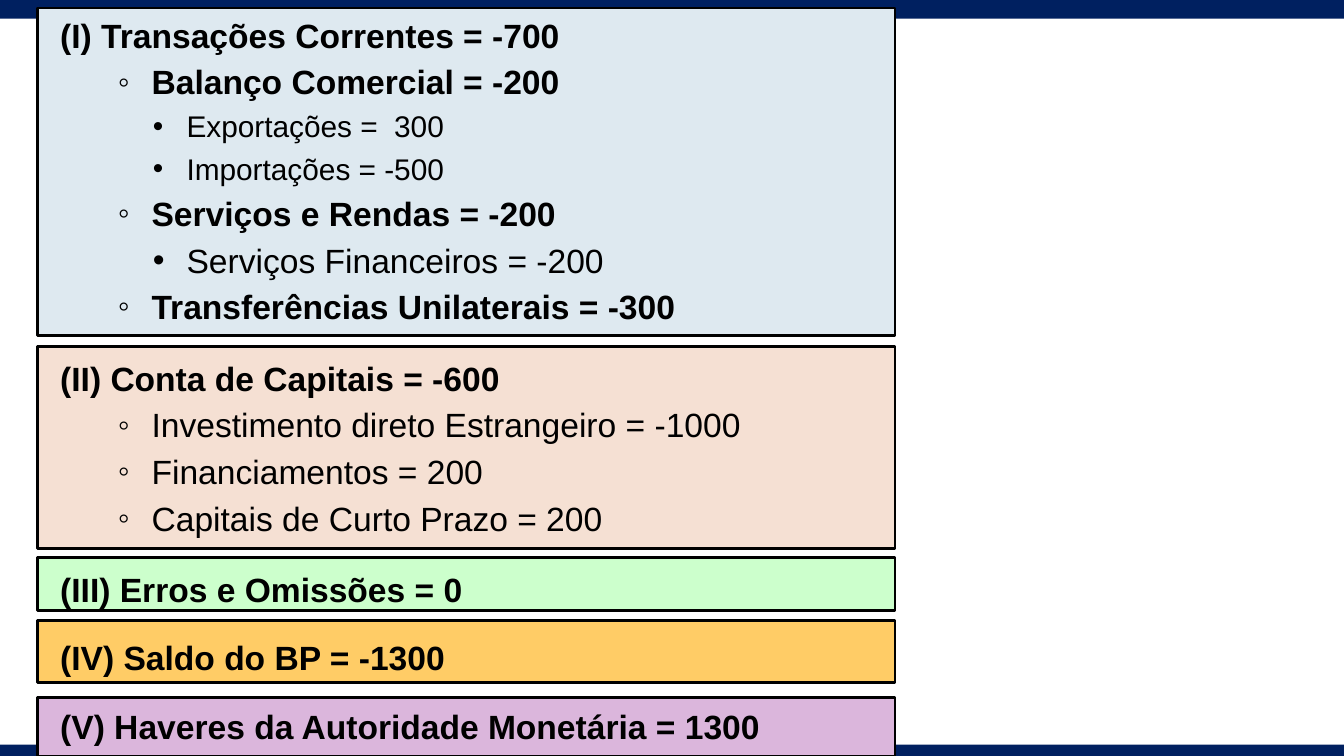
"""Build the balance of payments slide."""
from lxml.etree import SubElement
from pptx import Presentation
from pptx.dml.color import RGBColor
from pptx.enum.shapes import MSO_SHAPE
from pptx.enum.text import MSO_ANCHOR
from pptx.oxml.ns import qn
from pptx.util import Inches, Pt


def color(code):
    return RGBColor.from_string(code)


def add_box(slide, left, top, width, height, fill):
    box = slide.shapes.add_shape(
        MSO_SHAPE.RECTANGLE, Inches(left), Inches(top), Inches(width), Inches(height)
    )
    box.shadow.inherit = False
    box.fill.solid()
    box.fill.fore_color.rgb = color(fill)
    box.line.fill.background()
    return box


prs = Presentation()
prs.slide_width = Inches(10)
prs.slide_height = Inches(10 * 9 / 16)
slide = prs.slides.add_slide(prs.slide_layouts[6])

for top, height in [(0, 0.14), (5.54, 0.11)]:
    add_box(slide, 0, top, 10, height, "002060")

panels = [
    (5.19, 0.44, "DBB6DC"),
    (4.62, 0.46, "FFCC66"),
    (4.15, 0.39, "CCFFCC"),
    (2.58, 1.5, "F5E0D3"),
    (0.06, 2.44, "DEE9F0"),
]
for top, height, fill in panels:
    panel = add_box(slide, 0.28, top, 6.38, height, fill)
    panel.line.color.rgb = color("000000")
    panel.line.width = Pt(1.5)

levels = [None, (0.68, "◦"), (0.94, "•")]
items = [
    ("(I) Transações Correntes = -700", 0, 18, True, 1),
    ("Balanço Comercial = -200", 1, 18, True, 3.4),
    ("Exportações =  300", 2, 16, False, 3.5),
    ("Importações = -500", 2, 16, False, 3.5),
    ("Serviços e Rendas = -200", 1, 18, True, 3.4),
    ("Serviços Financeiros = -200", 2, 18, False, 3.5),
    ("Transferências Unilaterais = -300", 1, 18, True, 3.4),
    ("(II) Conta de Capitais = -600", 0, 18, True, 16.7),
    ("Investimento direto Estrangeiro = -1000", 1, 18, False, 3.4),
    ("Financiamentos = 200", 1, 18, False, 3.4),
    ("Capitais de Curto Prazo = 200", 1, 18, False, 3.4),
    ("(III) Erros e Omissões = 0", 0, 18, True, 16.5),
    ("(IV) Saldo do BP = -1300", 0, 18, True, 15.2),
    ("(V) Haveres da Autoridade Monetária = 1300", 0, 18, True, 15.2),
]
frame = slide.shapes.add_textbox(
    Inches(0.35), Inches(0.06), Inches(6.3), Inches(4.36)
).text_frame
frame.word_wrap = True
frame.vertical_anchor = MSO_ANCHOR.TOP
frame.text = "\n".join(item[0] for item in items)

for para, (text, level, size, bold, gap) in zip(frame.paragraphs, items):
    para.level = level
    para.space_before = Pt(gap)
    font = para.runs[0].font
    font.name = "Arial"
    font.size = Pt(size)
    font.bold = bold
    font.color.rgb = color("000000")
    if level:
        indent, mark = levels[level]
        props = para._p.get_or_add_pPr()
        props.set("marL", str(Inches(indent)))
        props.set("indent", str(Inches(-0.25)))
        SubElement(props, qn("a:buFont")).set("typeface", "Arial")
        SubElement(props, qn("a:buChar")).set("char", mark)

prs.save("out.pptx")
